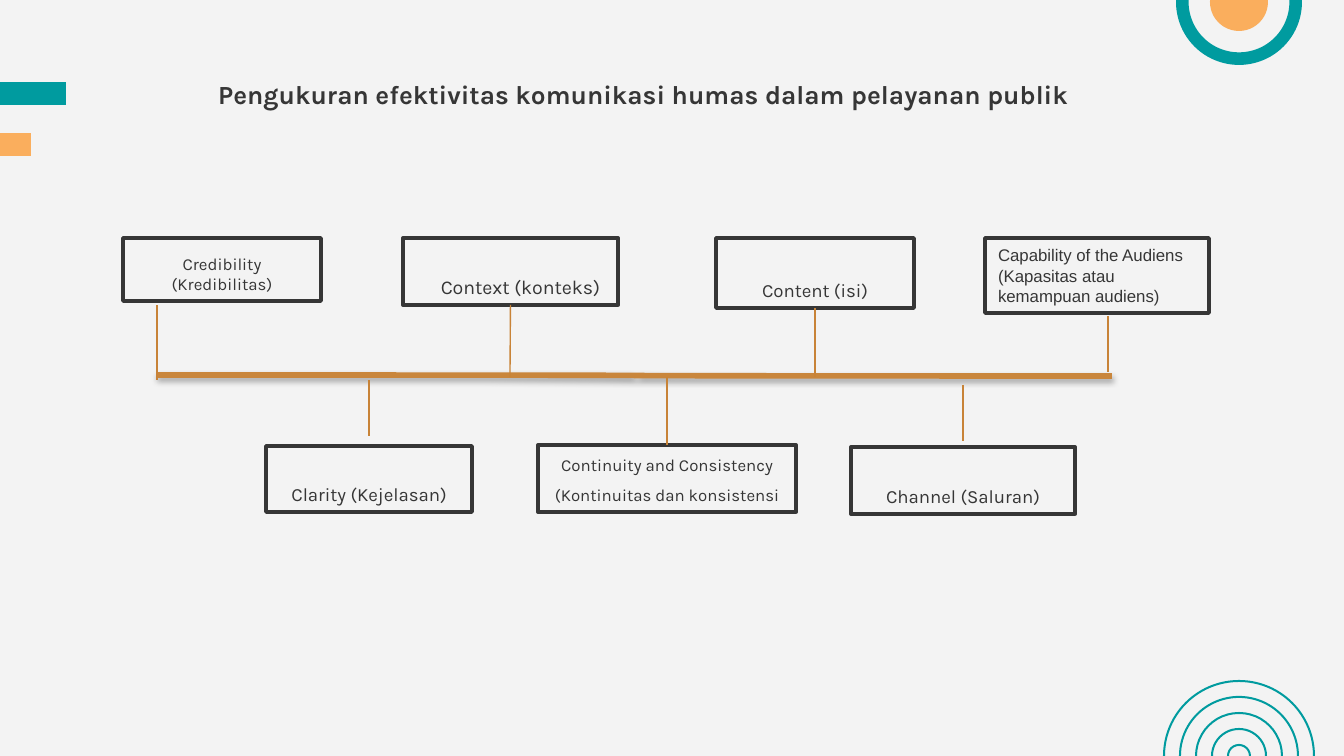
from dataclasses import dataclass

from lxml.etree import SubElement
from pptx import Presentation
from pptx.dml.color import RGBColor
from pptx.enum.shapes import MSO_CONNECTOR as Link, MSO_SHAPE as Shape
from pptx.enum.text import MSO_ANCHOR as Anchor, PP_ALIGN as Align
from pptx.oxml.ns import qn
from pptx.util import Emu, Pt

PX = 914400 / 134.4
BOTTOM, TOP = 2, 0


def px(length):
    return Emu(round(length * PX))


@dataclass(frozen=True)
class Theme:
    paper: str = "F3F3F3"
    ink: str = "363636"
    teal: str = "009B9F"
    orange: str = "FAAE5D"
    axis: str = "C9863C"
    stem: str = "C88337"
    font: str = "Karla"
    plain_font: str = "Arial"
    title: float = 14
    large: float = 10.5
    medium: float = 10
    small: float = 9


THEME = Theme()


def write(shape, text, *, size, font=THEME.font, bold=False, align=Align.CENTER,
          anchor=Anchor.TOP, insets=(13, 13, 13, 13), spacing=None, indent=None):
    """Insets run left, top, right, bottom; indent is (margin, first line)."""
    frame = shape.text_frame
    frame.word_wrap = True
    frame.vertical_anchor = anchor
    (frame.margin_left, frame.margin_top,
     frame.margin_right, frame.margin_bottom) = map(px, insets)
    line = frame.paragraphs[0]
    line.alignment = align
    if spacing:
        line.line_spacing = spacing
    if indent:
        properties = line._p.get_or_add_pPr()
        properties.set("marL", str(px(indent[0])))
        properties.set("indent", str(px(indent[1])))
    run = line.add_run()
    run.text = text
    run.font.name, run.font.size, run.font.bold = font, Pt(size), bold
    run.font.color.rgb = RGBColor.from_string(THEME.ink)


class Canvas:
    def __init__(self, slide, theme):
        self.slide, self.theme = slide, theme
        slide.background.fill.solid()
        slide.background.fill.fore_color.rgb = RGBColor.from_string(theme.paper)

    def block(self, kind, left, top, width, height, fill=None, line=None, weight=1):
        shape = self.slide.shapes.add_shape(kind, *map(px, (left, top, width, height)))
        shape.shadow.inherit = False
        if fill:
            shape.fill.solid()
            shape.fill.fore_color.rgb = RGBColor.from_string(fill)
        else:
            shape.fill.background()
        if line:
            shape.line.color.rgb = RGBColor.from_string(line)
            shape.line.width = Pt(weight)
        else:
            shape.line.fill.background()
        return shape

    def circle(self, x, y, radius, kind=Shape.OVAL, **look):
        return self.block(kind, x - radius, y - radius, 2 * radius, 2 * radius, **look)

    def title(self, text, left, top, width, height):
        box = self.slide.shapes.add_textbox(*map(px, (left, top, width, height)))
        write(box, text, size=self.theme.title, bold=True)

    def card(self, text, left, top, width, height, **text_format):
        box = self.block(Shape.RECTANGLE, left, top, width, height,
                         fill=self.theme.paper, line=self.theme.ink, weight=2)
        settings = dict(anchor=Anchor.BOTTOM, insets=(13, 13, 13, 7))
        write(box, text, **(settings | text_format))
        return box

    def connector(self, start, end, color, weight, kind=Link.STRAIGHT):
        link = self.slide.shapes.add_connector(kind, *map(px, (*start, *end)))
        link.line.color.rgb = RGBColor.from_string(color)
        link.line.width = Pt(weight)
        effects = SubElement(link._element.spPr, qn("a:effectLst"))
        return link, effects

    def stem(self, x, start, end, card=None, side=None):
        link, _ = self.connector((x, start), (x, end), self.theme.stem, 0.75)
        if card:
            link.end_connect(card, side)

    def axis(self, start, end):
        _, effects = self.connector(start, end, self.theme.axis, 3, Link.CURVE)
        shadow = SubElement(effects, qn("a:outerShdw"), blurRad=str(Pt(3.1)),
                            dist=str(Pt(1.8)), dir="5400000", rotWithShape="0")
        black = SubElement(shadow, qn("a:srgbClr"), val="000000")
        SubElement(black, qn("a:alpha"), val="35000")


def decorate(canvas):
    theme, x = canvas.theme, 1239
    for radius in range(75, 0, -16):
        canvas.circle(x, 756, radius, line=theme.teal, weight=1.07)
    canvas.block(Shape.RECTANGLE, 0, 133, 31, 23, fill=theme.orange)
    canvas.block(Shape.RECTANGLE, 0, 82, 66, 23, fill=theme.teal)
    ring = canvas.circle(x, 2, 63, Shape.DONUT, fill=theme.teal)
    ring.adjustments[0] = 0.1
    canvas.circle(x, 2, 29, fill=theme.orange)


def main():
    deck = Presentation()
    deck.slide_width, deck.slide_height = px(1344), px(756)
    canvas = Canvas(deck.slides.add_slide(deck.slide_layouts[6]), THEME)
    decorate(canvas)
    canvas.title("Pengukuran efektivitas komunikasi humas dalam pelayanan publik",
                 190, 65, 907, 84)

    canvas.card("Credibility (Kredibilitas)", 123, 238, 198, 63, size=THEME.small)
    context = canvas.card("Context (konteks)", 403, 238, 215, 67, size=THEME.large,
                          spacing=2.5, indent=(67, -47))
    content = canvas.card("Content (isi)", 716, 238, 198, 70, size=THEME.medium,
                          spacing=2.5)
    canvas.card("Clarity (Kejelasan)", 266, 446, 206, 66, size=THEME.medium, spacing=3)
    continuity = canvas.card("Continuity and Consistency (Kontinuitas dan konsistensi",
                             538, 445, 258, 67, size=THEME.small, spacing=1.5)
    canvas.card("Channel (Saluran)", 851, 447, 224, 67, size=THEME.medium, spacing=3)

    canvas.axis((157, 375), (1112, 376))
    canvas.stem(157, 380, 305)
    canvas.stem(369, 380, 436)
    canvas.stem(510, 377, 305, context, BOTTOM)
    canvas.stem(667, 377, 445, continuity, TOP)
    canvas.stem(815, 377, 308, content, BOTTOM)
    canvas.stem(963, 385, 441)
    canvas.stem(1108, 372, 316)

    canvas.card("Capability of the Audiens (Kapasitas atau kemampuan audiens)",
                985, 238, 224, 75, size=THEME.small, font=THEME.plain_font,
                align=Align.LEFT, anchor=Anchor.TOP, insets=(13, 7, 13, 7))
    deck.save("out.pptx")


if __name__ == "__main__":
    main()
